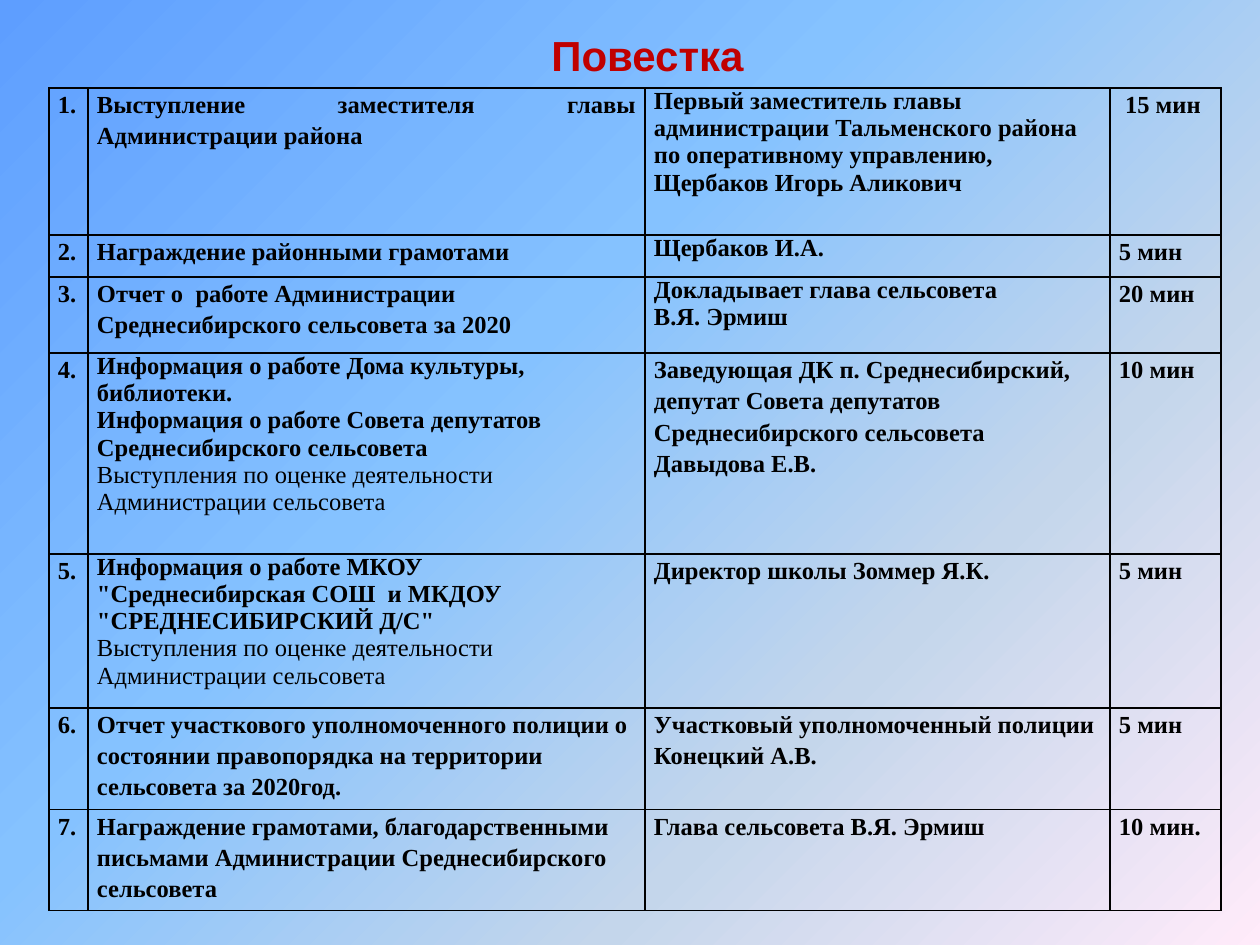
from pptx import Presentation
from pptx.dml.color import RGBColor
from pptx.enum.text import MSO_ANCHOR, PP_ALIGN
from pptx.oxml import parse_xml
from pptx.oxml.ns import nsdecls
from pptx.util import Pt

PX = 914400 / 126
TOP = MSO_ANCHOR.TOP
CENTER, LEFT, JUSTIFY = PP_ALIGN.CENTER, PP_ALIGN.LEFT, PP_ALIGN.JUSTIFY
RED = RGBColor(0xC0, 0x00, 0x00)
BLACK = RGBColor(0x00, 0x00, 0x00)
STOPS = [
    (0, RGBColor(0x5E, 0x9E, 0xFF)),
    (40, RGBColor(0x85, 0xC2, 0xFF)),
    (70, RGBColor(0xC4, 0xD6, 0xEB)),
    (100, RGBColor(0xFF, 0xEB, 0xFA)),
]
COLS = [39, 557, 465, 111]
ROWS = [147, 42, 76, 201, 154, 99, 98]
REVIEW = "Выступления по оценке деятельности Администрации сельсовета"
AGENDA = [
    ("Выступление заместителя главы Администрации района",
     "Первый заместитель главы администрации Тальменского района "
     "по оперативному управлению, Щербаков Игорь Аликович", " 15 мин"),
    ("Награждение районными грамотами", "Щербаков И.А.", "5 мин"),
    ("Отчет о  работе Администрации Среднесибирского сельсовета за 2020",
     "Докладывает глава сельсовета\nВ.Я. Эрмиш", "20 мин"),
    ("Информация о работе Дома культуры, библиотеки.\n"
     "Информация о работе Совета депутатов Среднесибирского сельсовета\n" + REVIEW,
     "Заведующая ДК п. Среднесибирский, депутат Совета депутатов "
     "Среднесибирского сельсовета Давыдова Е.В.", "10 мин"),
    ('Информация о работе МКОУ "Среднесибирская СОШ  и МКДОУ '
     '"СРЕДНЕСИБИРСКИЙ Д/С"\n' + REVIEW,
     "Директор школы Зоммер Я.К.", "5 мин"),
    ("Отчет участкового уполномоченного полиции о состоянии правопорядка "
     "на территории сельсовета за 2020год.",
     "Участковый уполномоченный полиции Конецкий А.В.", "5 мин"),
    ("Награждение грамотами, благодарственными письмами Администрации "
     "Среднесибирского сельсовета",
     "Глава сельсовета В.Я. Эрмиш", "10 мин."),
]
TIGHT = {(0, 2), (1, 2), (2, 2), (3, 1), (4, 1)}
SPREAD = {(0, 1), (4, 2), (6, 2)} | {(row, 3) for row in range(len(AGENDA))}


def px(num):
    """Turn pixels into EMU."""
    return round(num * PX)


def style(para, name, size, color, bold):
    """Set the font of a whole paragraph."""
    font = para.font
    font.name, font.size, font.bold = name, Pt(size), bold
    font.color.rgb = color


def add_back(slide):
    """Lay the diagonal gradient behind the slide."""
    stops = "".join(
        f'<a:gs pos="{pos * 1000}"><a:srgbClr val="{color}"/></a:gs>'
        for pos, color in STOPS)
    slide.element.cSld.insert(0, parse_xml(
        f'<p:bg {nsdecls("p", "a")}><p:bgPr><a:gradFill rotWithShape="1">'
        f'<a:gsLst>{stops}</a:gsLst><a:lin ang="2700000" scaled="0"/>'
        '</a:gradFill><a:effectLst/></p:bgPr></p:bg>'))


def add_title(slide, left, top, width, height):
    """Write the red heading in the given box."""
    box = slide.shapes.add_textbox(px(left), px(top), px(width), px(height))
    frame = box.text_frame
    frame.word_wrap = True
    frame.vertical_anchor = TOP
    frame.margin_top, frame.margin_bottom = px(10), 0
    para = frame.paragraphs[0]
    para.text = "Повестка"
    para.alignment = CENTER
    style(para, "Arial", 24, RED, True)


def frame_cell(cell):
    """Clear the fill and rule all four sides of a cell."""
    cell.fill.background()
    props = cell._tc.get_or_add_tcPr()
    for spot, side in enumerate("LRTB"):
        props.insert(spot, parse_xml(
            f'<a:ln{side} {nsdecls("a")} w="12700"><a:solidFill>'
            f'<a:srgbClr val="{BLACK}"/></a:solidFill></a:ln{side}>'))


def fill_cell(cell, text, tight, spread):
    """Write the lines of one agenda cell."""
    frame_cell(cell)
    cell.margin_left = cell.margin_right = px(9)
    cell.margin_top = cell.margin_bottom = 0
    cell.text = text
    for para in cell.text_frame.paragraphs:
        para.alignment = JUSTIFY if spread else LEFT
        para.line_spacing = 1.0 if tight else 1.15
        style(para, "Times New Roman", 14, BLACK, para.text != REVIEW)


def add_agenda(slide, left, top):
    """Build the agenda table from its top left corner."""
    table = slide.shapes.add_table(
        len(ROWS), len(COLS), px(left), px(top),
        px(sum(COLS)), px(sum(ROWS))).table
    table.first_row = table.horz_banding = False
    for col, width in zip(table.columns, COLS):
        col.width = px(width)
    for row, height in zip(table.rows, ROWS):
        row.height = px(height)
    for row, item in enumerate(AGENDA):
        for col, text in enumerate((f"{row + 1}.", *item)):
            spot = (row, col)
            fill_cell(table.cell(row, col), text, spot in TIGHT, spot in SPREAD)


def main():
    """Make the slide and save it."""
    deck = Presentation()
    deck.slide_width, deck.slide_height = px(1260), px(945)
    slide = deck.slides.add_slide(deck.slide_layouts[6])
    add_back(slide)
    add_title(slide, 98, 20, 1099, 49)
    add_agenda(slide, 49, 88)
    deck.save("out.pptx")


if __name__ == "__main__":
    main()
